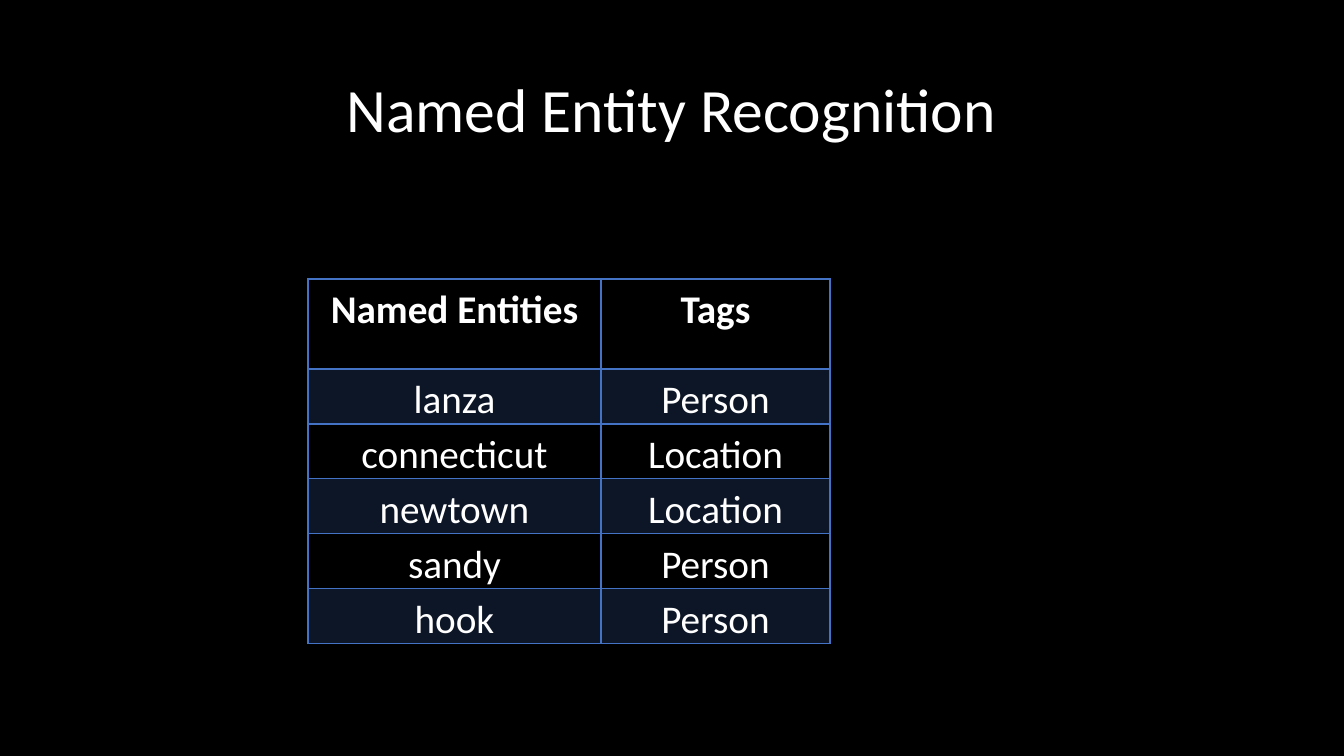
from lxml import etree
from pptx import Presentation
from pptx.dml.color import RGBColor
from pptx.enum.text import MSO_ANCHOR, PP_ALIGN
from pptx.oxml import parse_xml
from pptx.oxml.ns import nsdecls, qn
from pptx.util import Pt

PX = 914400 / 100.8
CENTER = PP_ALIGN.CENTER
MIDDLE = MSO_ANCHOR.MIDDLE
FONT = "Calibri"
BLACK, WHITE, BLUE = "000000", "FFFFFF", "4472C4"
ROWS = [
    ("Named Entities", "Tags"),
    ("lanza", "Person"),
    ("connecticut", "Location"),
    ("newtown", "Location"),
    ("sandy", "Person"),
    ("hook", "Person"),
]


def px(n):
    return round(n * PX)


def color(code):
    return RGBColor.from_string(code)


def write(frame, text, size, spacing, bold=False):
    para = frame.paragraphs[0]
    para.text = text
    para.alignment = CENTER
    para.line_spacing = spacing
    font = para.font
    font.name, font.size, font.bold = FONT, Pt(size), bold
    font.color.rgb = color(WHITE)


def add_title(slide, left, top, width, height):
    box = slide.shapes.add_textbox(px(left), px(top), px(width), px(height))
    frame = box.text_frame
    frame.word_wrap = True
    frame.vertical_anchor = MIDDLE
    write(frame, "Named Entity Recognition", 44, 0.9)


def set_fill(cell, banded):
    if not banded:
        cell.fill.background()
        return
    cell.fill.solid()
    cell.fill.fore_color.rgb = color(BLUE)
    tint = cell._tc.tcPr.find(".//" + qn("a:srgbClr"))
    etree.SubElement(tint, qn("a:alpha"), val="20000")


def set_edges(cell, widths):
    # Borders come before the fill in the cell properties
    for spot, (side, points) in enumerate(widths.items()):
        line = parse_xml(
            f'<a:ln{side} {nsdecls("a")} w="{Pt(points)}"><a:solidFill>'
            f'<a:srgbClr val="{BLUE}"/></a:solidFill></a:ln{side}>')
        cell._tc.tcPr.insert(spot, line)


def add_grid(slide, left, top, widths, heights):
    frame = slide.shapes.add_table(
        len(heights), len(widths), px(left), px(top),
        px(sum(widths)), px(sum(heights)))
    table = frame.table
    table.first_row = table.horz_banding = False
    for col, width in zip(table.columns, widths):
        col.width = px(width)
    for r, (words, height) in enumerate(zip(ROWS, heights)):
        table.rows[r].height = px(height)
        for c, word in enumerate(words):
            cell = table.cell(r, c)
            cell.margin_left = cell.margin_right = px(7)
            cell.margin_top = cell.margin_bottom = 0
            write(cell.text_frame, word, 28, 1.15, bold=r == 0)
            set_fill(cell, r % 2 == 1)
            # A thicker rule parts the header from the body
            set_edges(cell, {"L": 1, "R": 1, "T": 2 if r == 1 else 1,
                             "B": 2 if r == 0 else 1})


def main():
    deck = Presentation()
    deck.slide_width, deck.slide_height = px(1344), px(756)
    slide = deck.slides.add_slide(deck.slide_layouts[6])
    back = slide.background.fill
    back.solid()
    back.fore_color.rgb = color(BLACK)
    # Title
    add_title(slide, 92, 40, 1159, 146)
    # Entity table
    add_grid(slide, 308, 279, [293, 229], [90] + [55] * 5)
    deck.save("out.pptx")


if __name__ == "__main__":
    main()
